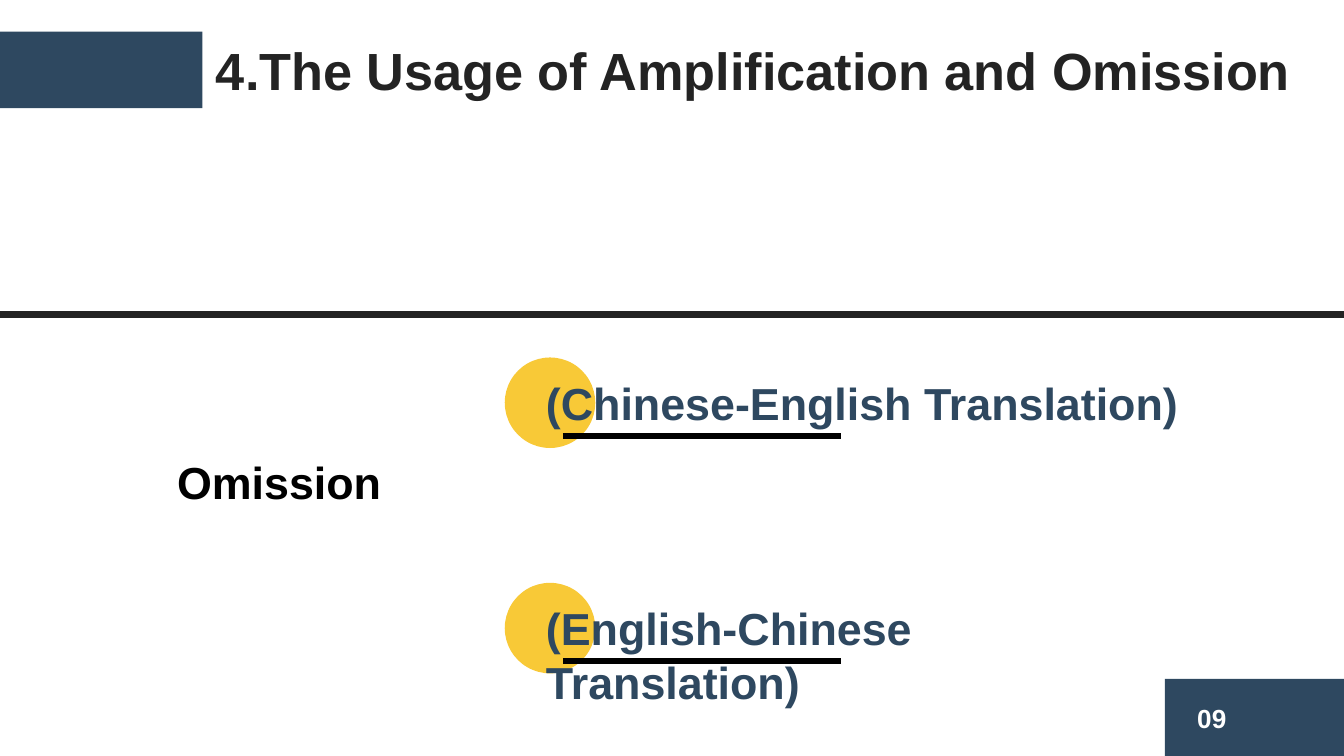
import pptx
import pptx.util
import pptx.dml.color
import pptx.enum.shapes
import pptx.enum.text
import pptx.oxml.ns
import lxml.etree

Pt = pptx.util.Pt
SHAPE = pptx.enum.shapes.MSO_SHAPE
COLORS = {"navy": "2E4860", "yellow": "F8C937", "ink": "232323",
          "black": "000000", "white": "FFFFFF"}

TITLE = "4.The Usage of Amplification and Omission"
TOPIC = "Omission"
PAGE = "09"
DIRECTIONS = [("(Chinese-English Translation)", 411),
              ("(English-Chinese Translation)", 347)]
FIRST_TOP, STEP = 191.5, 120.75


def color(name):
    return pptx.dml.color.RGBColor.from_string(COLORS[name])


def add_block(s, kind, box, fill):
    sp = s.shapes.add_shape(kind, *map(Pt, box))
    sp.shadow.inherit = False
    sp.fill.solid()
    sp.fill.fore_color.rgb = color(fill)
    sp.line.fill.background()


def add_rule(s, left, right, y, name, width):
    c = s.shapes.add_connector(pptx.enum.shapes.MSO_CONNECTOR.STRAIGHT,
                               Pt(left), Pt(y), Pt(right), Pt(y))
    c.line.color.rgb = color(name)
    c.line.width = Pt(width)
    lxml.etree.SubElement(c.element.spPr, pptx.oxml.ns.qn("a:effectLst"))


def set_text(sp, text, size, name):
    tf = sp.text_frame
    tf.word_wrap = True
    tf.auto_size = pptx.enum.text.MSO_AUTO_SIZE.NONE
    tf.vertical_anchor = pptx.enum.text.MSO_ANCHOR.TOP
    p = tf.paragraphs[0]
    p.text = text
    p.alignment = pptx.enum.text.PP_ALIGN.LEFT
    p.font.name = "Arial"
    p.font.size = Pt(size)
    p.font.bold = True
    p.font.color.rgb = color(name)


def add_text(s, box, text, size, name):
    set_text(s.shapes.add_textbox(*map(Pt, box)), text, size, name)


def main():
    """Build the slide on the usage of omission."""
    prs = pptx.Presentation()
    prs.slide_width, prs.slide_height = Pt(720), Pt(405)
    s = prs.slides.add_slide(prs.slide_layouts[5])

    title = s.shapes.title
    title.left, title.top, title.width, title.height = map(Pt, (108.5, 17, 618, 41))
    set_text(title, TITLE, 28, "ink")
    add_block(s, SHAPE.RECTANGLE, (0, 17, 108.5, 41), "navy")
    add_rule(s, 0, 720, 168.5, "ink", 4)

    add_text(s, (87.8, 240, 160, 36), TOPIC, 24, "black")
    for i, (text, width) in enumerate(DIRECTIONS):
        top = FIRST_TOP + i * STEP
        add_block(s, SHAPE.OVAL, (270.4, top, 48.5, 48.5), "yellow")
        add_text(s, (285.4, top + 6, width, 36), text, 24, "navy")
        add_rule(s, 301.5, 450.5, top + 42, "black", 3)

    add_block(s, SHAPE.RECTANGLE, (624, 363.75, 96, 42), "navy")
    add_text(s, (634.3, 372.5, 36, 24.5), PAGE, 14, "white")
    prs.save("out.pptx")


if __name__ == "__main__":
    main()
